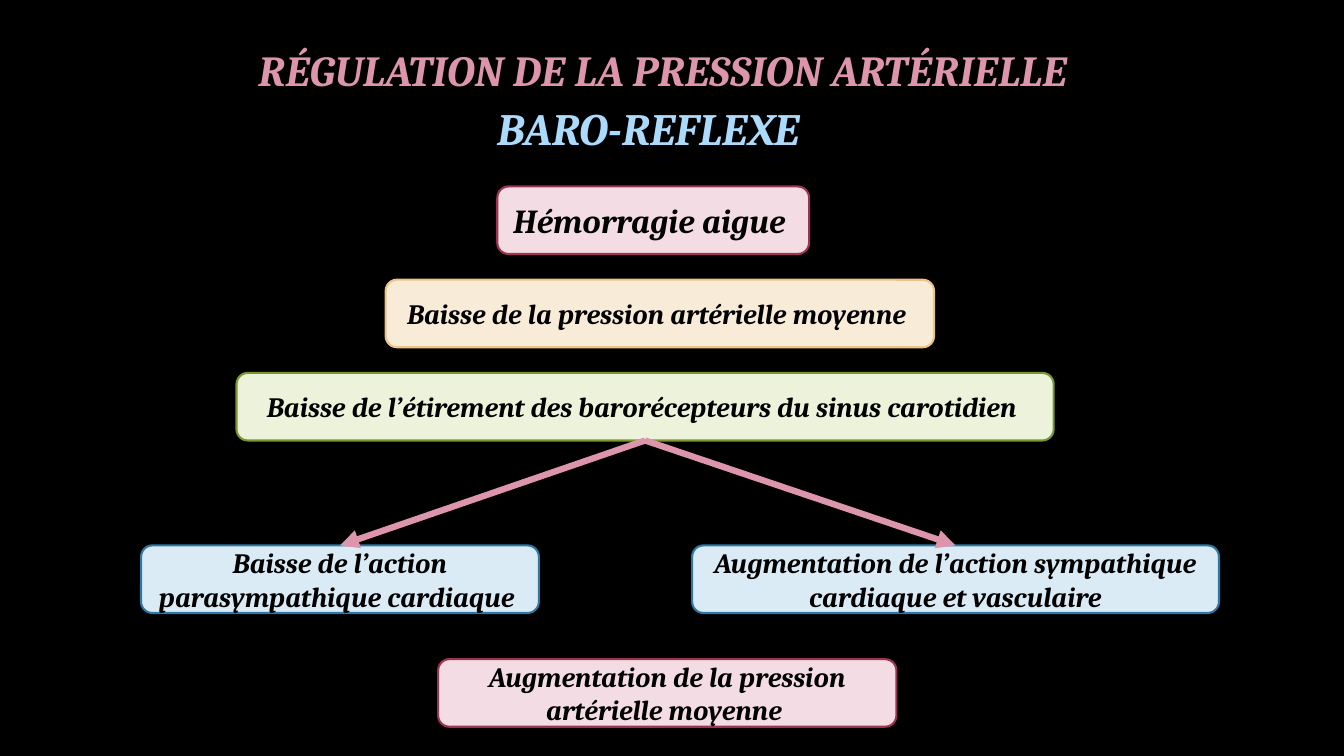
"""Build a flow slide on the baroreflex response to acute haemorrhage."""
from dataclasses import dataclass

from lxml import etree
from pptx import Presentation, util as u
from pptx.dml.color import RGBColor
from pptx.enum import shapes, text
from pptx.oxml import ns


@dataclass(frozen=True)
class Theme:
    font: str = "Cambria"
    background: str = "000000"
    ink: str = "000000"
    rose: str = "DC95AA"
    sky: str = "ABDAFC"
    title_size: float = 30.6
    subtitle_size: float = 32
    cause_size: float = 24
    step_size: float = 20
    border: float = 1.5
    arrow: float = 4.5


THEME = Theme()
PALETTE = {
    "pink": ("F3DCE3", "9C3351"),
    "orange": ("F8EBD8", "EBC48A"),
    "green": ("ECF3DA", "78982F"),
    "blue": ("DBEBF5", "2E78A3"),
}

# (text, left %, top in, width %, height in, size, colour) rows use inches below
HEADINGS = [
    ("RÉGULATION DE LA PRESSION ARTÉRIELLE ", 7.2, 0, 84.9, 1.38,
     THEME.title_size, THEME.rose, text.MSO_ANCHOR.MIDDLE),
    ("BARO-REFLEXE ", 26.2, 0.95, 44.9, 0.64,
     THEME.subtitle_size, THEME.sky, text.MSO_ANCHOR.TOP),
]
STEPS = {
    "cause": ("Hémorragie aigue ", 37, 0, 23.2, "pink", THEME.cause_size),
    "pressure": ("Baisse de la pression artérielle moyenne ",
                 28.7, 1, 40.8, "orange", THEME.step_size),
    "receptors": ("Baisse de l’étirement des barorécepteurs du sinus carotidien ",
                  17.6, 2, 60.8, "green", THEME.step_size),
    "parasympathetic": ("Baisse de l’action parasympathique cardiaque ",
                        10.5, 3.85, 29.6, "blue", THEME.step_size),
    "sympathetic": ("Augmentation de l’action sympathique cardiaque et vasculaire",
                    51.5, 3.85, 39.2, "blue", THEME.step_size),
    "result": ("Augmentation de la pression artérielle moyenne ",
               32.6, 5.07, 34.1, "pink", THEME.step_size),
}
ARROWS = [("receptors", "parasympathetic"), ("receptors", "sympathetic")]

WIDTH, HEIGHT = 13.33, 7.5
FIRST_ROW, ROW_PITCH, STEP_HEIGHT = 1.85, 0.925, 0.67
BOTTOM, TOP = 2, 0


def frame(left, top, width, height):
    column = WIDTH / 100
    return [u.Inches(n) for n in (left * column, top, width * column, height)]


def write(shape, wording, size, colour, anchor):
    body = shape.text_frame
    body.word_wrap = True
    body.vertical_anchor = anchor
    paragraph = body.paragraphs[0]
    paragraph.alignment = text.PP_ALIGN.CENTER
    run = paragraph.add_run()
    run.text = wording
    run.font.name = THEME.font
    run.font.size = u.Pt(size)
    run.font.bold = run.font.italic = True
    run.font.color.rgb = RGBColor.from_string(colour)


def add_step(slide, wording, left, row, width, tint, size):
    top = FIRST_ROW + row * ROW_PITCH
    step = slide.shapes.add_shape(shapes.MSO_SHAPE.ROUNDED_RECTANGLE,
                                  *frame(left, top, width, STEP_HEIGHT))
    fill, border = PALETTE[tint]
    step.shadow.inherit = False
    step.fill.solid()
    step.fill.fore_color.rgb = RGBColor.from_string(fill)
    step.line.color.rgb = RGBColor.from_string(border)
    step.line.width = u.Pt(THEME.border)
    write(step, wording, size, THEME.ink, text.MSO_ANCHOR.MIDDLE)
    return step


def add_arrow(slide, source, target):
    arrow = slide.shapes.add_connector(shapes.MSO_CONNECTOR.STRAIGHT, 0, 0, 0, 0)
    arrow.begin_connect(source, BOTTOM)
    arrow.end_connect(target, TOP)
    arrow.line.color.rgb = RGBColor.from_string(THEME.rose)
    arrow.line.width = u.Pt(THEME.arrow)
    etree.SubElement(arrow.line._get_or_add_ln(), ns.qn("a:tailEnd"), type="triangle")
    etree.SubElement(arrow._element.spPr, ns.qn("a:effectLst"))


def main():
    deck = Presentation()
    deck.slide_width, deck.slide_height = u.Inches(WIDTH), u.Inches(HEIGHT)
    slide = deck.slides.add_slide(deck.slide_layouts[6])
    slide.background.fill.solid()
    slide.background.fill.fore_color.rgb = RGBColor.from_string(THEME.background)
    for wording, left, top, width, height, size, colour, anchor in HEADINGS:
        heading = slide.shapes.add_textbox(*frame(left, top, width, height))
        write(heading, wording, size, colour, anchor)
    steps = {key: add_step(slide, *step) for key, step in STEPS.items()}
    for source, target in ARROWS:
        add_arrow(slide, steps[source], steps[target])
    deck.save("out.pptx")


if __name__ == "__main__":
    main()
